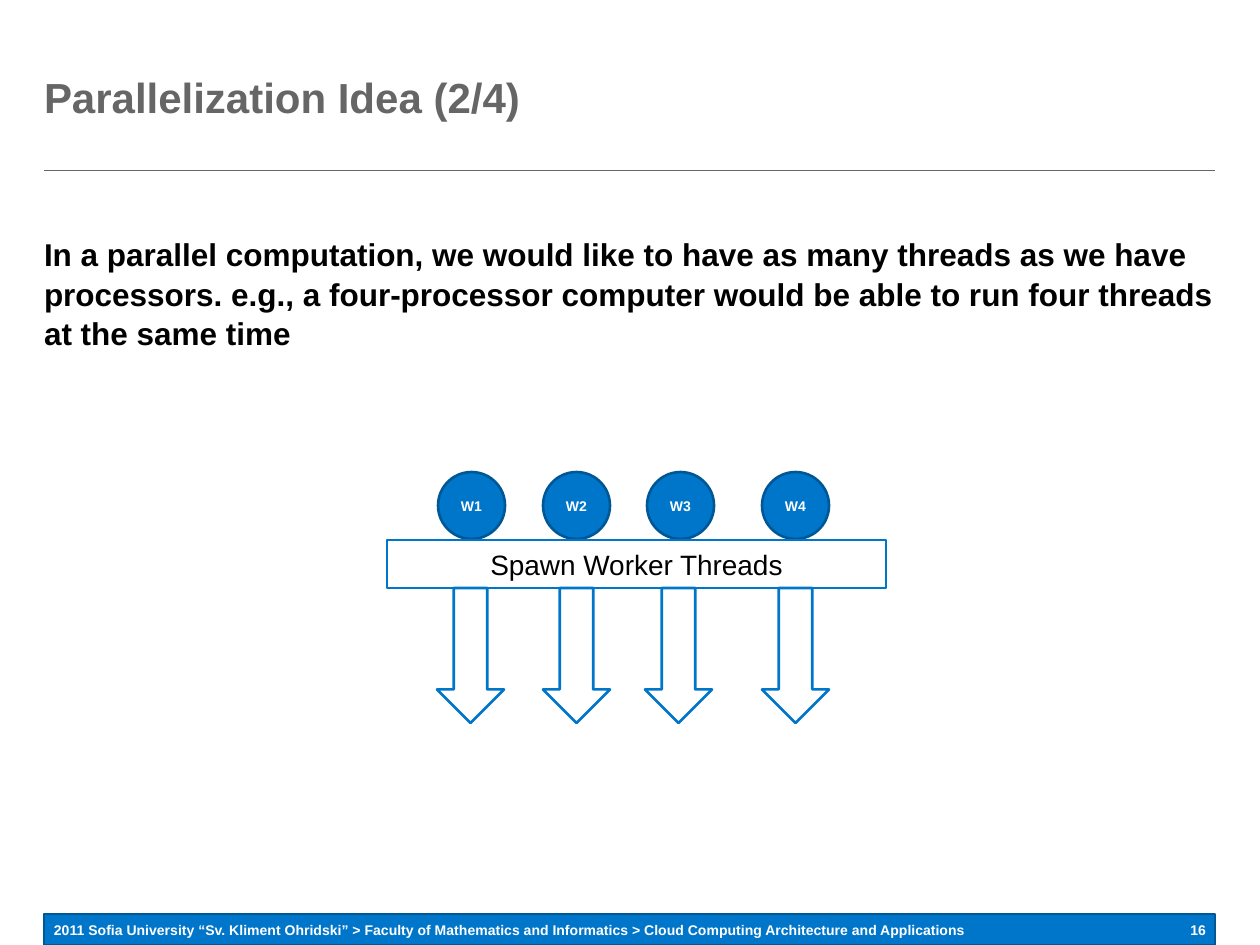
from lxml import etree
from pptx import Presentation
from pptx import util as u
from pptx.dml.color import RGBColor
from pptx.enum import shapes, text
from pptx.oxml.ns import qn

PX = 914400 / 126
FONT = "Arial"
WHITE = RGBColor(0xFF, 0xFF, 0xFF)
BLACK = RGBColor(0, 0, 0)
GRAY = RGBColor(0x66, 0x66, 0x66)
BLUE = RGBColor(0x00, 0x76, 0xCB)
DARK_BLUE = RGBColor(0x00, 0x57, 0x96)

LEFT, WIDTH = 44, 1171
WORKER_SIZE = 67
WORKERS = (("W1", 438, 437), ("W2", 543, 543), ("W3", 647, 645), ("W4", 762, 762))


def px(*lengths):
    return [round(length * PX) for length in lengths]


def write(shape, content, size, color, bold=True, align=text.PP_ALIGN.LEFT,
          anchor=text.MSO_ANCHOR.TOP, insets=(0, 0, 0, 0)):
    frame = shape.text_frame
    frame.word_wrap = True
    frame.auto_size = text.MSO_AUTO_SIZE.NONE
    frame.vertical_anchor = anchor
    (frame.margin_left, frame.margin_top,
     frame.margin_right, frame.margin_bottom) = px(*insets)
    paragraph = frame.paragraphs[0]
    paragraph.text = content
    paragraph.alignment = align
    paragraph.font.name = FONT
    paragraph.font.size = u.Pt(size)
    paragraph.font.bold = bold
    paragraph.font.color.rgb = color
    return paragraph


def place(shape, *box):
    shape.left, shape.top, shape.width, shape.height = px(*box)


def add_block(slide, kind, box, fill, line):
    shape = slide.shapes.add_shape(kind, *px(*box))
    shape.shadow.inherit = False
    shape.fill.solid()
    shape.fill.fore_color.rgb = fill
    shape.line.color.rgb = line
    shape.line.width = u.Pt(1.5)
    return shape


def add_label(shape, content, size, color, bold):
    write(shape, content, size, color, bold, text.PP_ALIGN.CENTER,
          text.MSO_ANCHOR.MIDDLE, (13, 10, 13, 10))


def add_rule(slide):
    rule = slide.shapes.add_connector(
        shapes.MSO_CONNECTOR.STRAIGHT, *px(LEFT, 170, LEFT + WIDTH, 170))
    rule.line.color.rgb = GRAY
    rule.line.width = u.Pt(0.5)
    etree.SubElement(rule._element.spPr, qn("a:effectLst"))


def add_footer(slide):
    add_block(slide, shapes.MSO_SHAPE.RECTANGLE, (LEFT, 914, WIDTH, 31), BLUE, DARK_BLUE)
    credit = slide.shapes.add_textbox(*px(LEFT, 922, 932, 16))
    write(credit, "2011 Sofia University “Sv. Kliment Ohridski” > Faculty of Mathematics "
          "and Informatics > Cloud Computing Architecture and Applications",
          8, WHITE, insets=(10, 0, 0, 0))
    number = slide.shapes.add_textbox(*px(1188, 922, 28, 16))
    write(number, "16", 8, WHITE, align=text.PP_ALIGN.RIGHT, insets=(0, 0, 10, 0))


def fill_placeholders(slide):
    title, body = slide.placeholders
    place(title, LEFT, 44, WIDTH, 105)
    write(title, "Parallelization Idea (2/4)", 24, GRAY, anchor=text.MSO_ANCHOR.MIDDLE)
    place(body, LEFT, 233, WIDTH, 161)
    paragraph = write(
        body, "In a parallel computation, we would like to have as many threads as we "
        "have processors. e.g., a four-processor computer would be able to run four "
        "threads at the same time", 18, BLACK)
    paragraph.space_before = u.Pt(16.2)
    paragraph.line_spacing = 1.05
    properties = paragraph._p.get_or_add_pPr()
    properties.set("marL", "0")
    properties.set("indent", "0")
    properties.insert_element_before(
        properties.makeelement(qn("a:buNone"), {}), "a:tabLst", "a:defRPr", "a:extLst")


def add_diagram(slide):
    for name, circle_left, _ in WORKERS:
        worker = add_block(slide, shapes.MSO_SHAPE.OVAL,
                           (circle_left, 472, WORKER_SIZE, WORKER_SIZE), BLUE, DARK_BLUE)
        add_label(worker, name, 8, WHITE, True)
    spawn = add_block(slide, shapes.MSO_SHAPE.RECTANGLE, (387, 540, 499, 48), WHITE, BLUE)
    add_label(spawn, "Spawn Worker Threads", 16, BLACK, False)
    for _, _, arrow_left in WORKERS:
        add_block(slide, shapes.MSO_SHAPE.DOWN_ARROW,
                  (arrow_left, 588, WORKER_SIZE, 135), WHITE, BLUE)


def main():
    presentation = Presentation()
    presentation.slide_width, presentation.slide_height = px(1260, 945)
    slide = presentation.slides.add_slide(presentation.slide_layouts[1])
    add_rule(slide)
    add_footer(slide)
    fill_placeholders(slide)
    add_diagram(slide)
    presentation.save("out.pptx")


if __name__ == "__main__":
    main()
